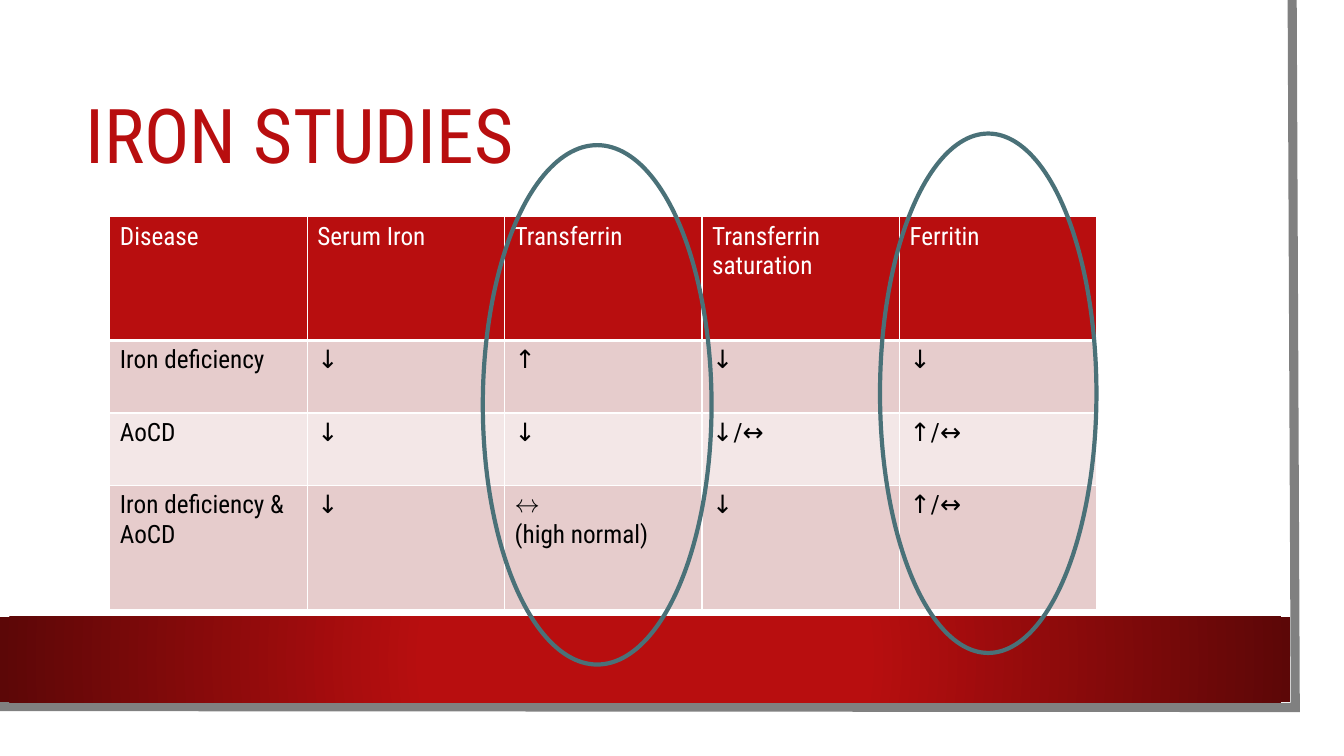
from lxml import etree
from pptx import Presentation
from pptx.dml.color import RGBColor
from pptx.enum import shapes, text
from pptx.oxml.ns import qn
from pptx.util import Pt

TITLE = "IRON STUDIES"
ROWS = [
    ["Disease", "Serum Iron", "Transferrin", "Transferrin saturation", "Ferritin"],
    ["Iron deficiency", "↓", "↑", "↓", "↓"],
    ["AoCD", "↓", "↓", "↓/↔", "↑/↔"],
    ["Iron deficiency & AoCD", "↓", "↔\n(high normal)", "↓", "↑/↔"],
]
ROW_HEIGHTS = [88.5, 51.7, 51.7, 88.5]
COL_WIDTH = 141
TABLE_AT = (78.5, 154.8)
HIGHLIGHTS = [(628.6, 95.4, 154.6, 371), (344.9, 103.7, 163.4, 371)]
PANEL = (0, 0, 943.2, 523.4)
BAND = (0, 440.6, 921.6, 61.2)
EDGE = [(923, 0), (925.2, 505.4), (-2.2, 504.7)]

THEME = {
    "font": "Roboto Condensed", "title": 54, "body": 18,
    "red": "B80E0F", "dark": "5C0707", "white": "FFFFFF", "black": "000000",
    "grey": "808080", "teal": "4A7178", "bands": ["E6CCCC", "F3E7E7"],
}


def rgb(value):
    return RGBColor.from_string(value)


def write(tf, content, size, color, spacing=None):
    """Fill a text frame, one paragraph per line of content."""
    tf.word_wrap = True
    for i, line in enumerate(content.split("\n")):
        p = tf.paragraphs[0] if i == 0 else tf.add_paragraph()
        if spacing:
            p.line_spacing = spacing
        r = p.add_run()
        r.text = line
        r.font.name, r.font.size, r.font.bold = THEME["font"], Pt(size), False
        r.font.color.rgb = rgb(color)


def style(sp, fill=None, line=None, width=0):
    sp.shadow.inherit = False
    if fill:
        sp.fill.solid()
        sp.fill.fore_color.rgb = rgb(fill)
    else:
        sp.fill.background()
    if line:
        sp.line.color.rgb = rgb(line)
        sp.line.width = Pt(width)
    else:
        sp.line.fill.background()


def add_shape(slide, kind, box, **look):
    sp = slide.shapes.add_shape(kind, *map(Pt, box))
    style(sp, **look)
    return sp


def add_border(cell, side, width):
    ln = etree.SubElement(cell._tc.get_or_add_tcPr(), qn("a:ln" + side), w=str(Pt(width)))
    fill = etree.SubElement(ln, qn("a:solidFill"))
    etree.SubElement(fill, qn("a:srgbClr"), val=THEME["white"])


def add_frame(slide):
    """Draw the panel, its grey edge and the red band."""
    add_shape(slide, shapes.MSO_SHAPE.RECTANGLE, PANEL, fill=THEME["white"])

    points = [(Pt(x), Pt(y)) for x, y in EDGE]
    builder = slide.shapes.build_freeform(*points[0])
    builder.add_line_segments(points[1:], close=False)
    edge = builder.convert_to_shape()
    style(edge, line=THEME["grey"], width=6.5)
    etree.SubElement(edge.line._get_or_add_ln(), qn("a:miter"), lim="800000")

    band = add_shape(slide, shapes.MSO_SHAPE.RECTANGLE, BAND)
    band.fill.gradient()
    stops = zip(band.fill.gradient_stops, [(0.34, "red"), (1, "dark")])
    for stop, (position, name) in stops:
        stop.position = position
        stop.color.rgb = rgb(THEME[name])
    grad = band._element.spPr.find(qn("a:gradFill"))
    grad.remove(grad.find(qn("a:lin")))
    radial = etree.SubElement(grad, qn("a:path"), path="circle")
    etree.SubElement(radial, qn("a:fillToRect"), l="50000", t="50000", r="50000", b="50000")


def add_results(slide):
    n_cols = len(ROWS[0])
    box = (*TABLE_AT, COL_WIDTH * n_cols, sum(ROW_HEIGHTS))
    table = slide.shapes.add_table(len(ROWS), n_cols, *map(Pt, box)).table
    for col in table.columns:
        col.width = Pt(COL_WIDTH)
    for i, (values, height) in enumerate(zip(ROWS, ROW_HEIGHTS)):
        table.rows[i].height = Pt(height)
        header = i == 0
        widths = {"L": 1, "R": 1, "T": 3 if i == 1 else 1, "B": 3 if header else 1}
        for j, value in enumerate(values):
            cell = table.cell(i, j)
            for side, width in widths.items():
                add_border(cell, side, width)
            cell.fill.solid()
            cell.fill.fore_color.rgb = rgb(THEME["red"] if header else THEME["bands"][(i - 1) % 2])
            write(cell.text_frame, value, THEME["body"], THEME["white" if header else "black"])


def main():
    prs = Presentation()
    prs.slide_width, prs.slide_height = Pt(960), Pt(540)
    slide = prs.slides.add_slide(prs.slide_layouts[6])
    add_frame(slide)
    title = slide.shapes.add_textbox(Pt(54), Pt(54), Pt(818.6), Pt(90.7)).text_frame
    title.vertical_anchor = text.MSO_ANCHOR.MIDDLE
    write(title, TITLE, THEME["title"], THEME["red"], spacing=0.9)
    add_results(slide)
    for box in HIGHLIGHTS:
        add_shape(slide, shapes.MSO_SHAPE.OVAL, box, line=THEME["teal"], width=3)
    prs.save("out.pptx")


if __name__ == "__main__":
    main()
